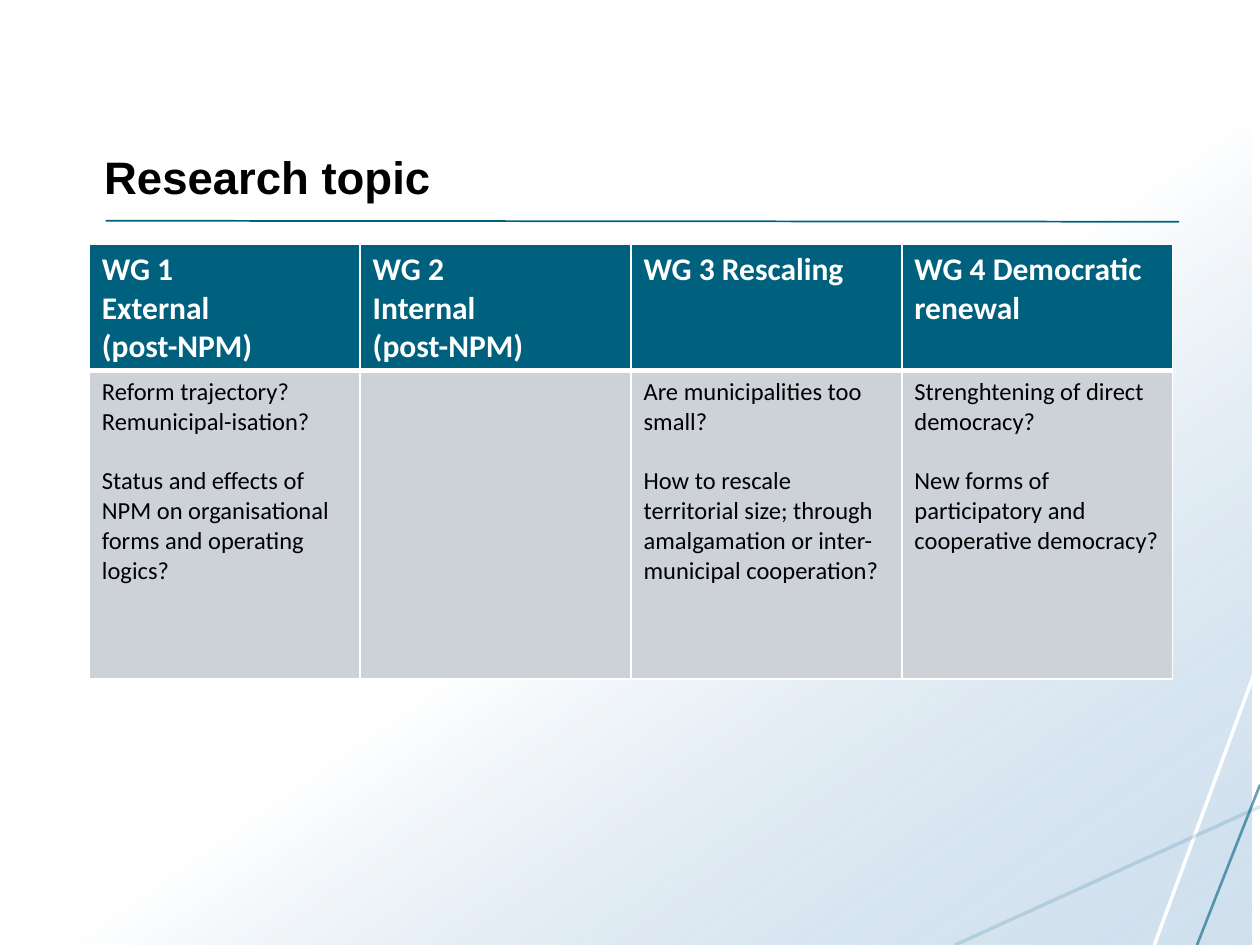
from lxml.etree import SubElement
from pptx import Presentation
from pptx.dml.color import RGBColor
from pptx.enum.shapes import MSO_CONNECTOR, MSO_SHAPE
from pptx.enum.text import MSO_ANCHOR
from pptx.oxml.ns import qn
from pptx.util import Cm, Pt

WHITE = RGBColor(0xFF, 0xFF, 0xFF)
BLACK = RGBColor(0x00, 0x00, 0x00)
PALE_BLUE = RGBColor(0xA9, 0xC7, 0xE0)
TEAL = RGBColor(0x00, 0x61, 0x7F)
LIGHT_TEAL = RGBColor(0x15, 0x71, 0x8F)
GREY = RGBColor(0xCC, 0xD2, 0xD8)


def set_alpha(properties, percent):
    color = next(properties.iter(qn("a:srgbClr")))
    SubElement(color, qn("a:alpha"), val=str(percent * 1000))


def add_border(cell, side, width):
    border = SubElement(cell._tc.get_or_add_tcPr(), qn("a:" + side), w=str(Pt(width)))
    fill = SubElement(border, qn("a:solidFill"))
    SubElement(fill, qn("a:srgbClr"), val=str(WHITE))


presentation = Presentation()
presentation.slide_width = Cm(25.4)
presentation.slide_height = Cm(19.05)
slide = presentation.slides.add_slide(presentation.slide_layouts[6])

# Gradient backdrop
backdrop = slide.shapes.add_shape(MSO_SHAPE.RECTANGLE, Cm(-0.18), Cm(0), Cm(25.4), Cm(19.05))
backdrop.shadow.inherit = False
backdrop.line.fill.background()
backdrop.fill.gradient()
backdrop.fill.gradient_angle = 305
start, end = backdrop.fill.gradient_stops
start.position, start.color.rgb = 0.54, WHITE
end.position, end.color.rgb = 1, PALE_BLUE
set_alpha(backdrop._element.spPr.findall(".//" + qn("a:gs"))[1], 54)

# Corner lines and the rule under the title: ends, colour, width, opacity
lines = [
    (25.4, 13.26, 23.27, 19.05, WHITE, 2, 100),
    (25.4, 16.26, 19.25, 19.05, LIGHT_TEAL, 2, 16),
    (25.4, 15.82, 24.13, 19.05, TEAL, 1.5, 60),
    (2.13, 4.45, 23.77, 4.47, TEAL, 1, 100),
]
for x1, y1, x2, y2, color, width, opacity in lines:
    line = slide.shapes.add_connector(MSO_CONNECTOR.STRAIGHT, Cm(x1), Cm(y1), Cm(x2), Cm(y2))
    line.line.color.rgb = color
    line.line.width = Pt(width)
    if opacity < 100:
        set_alpha(line._element.spPr, opacity)
    SubElement(line._element.spPr, qn("a:effectLst"))

# Title
title = slide.shapes.add_textbox(Cm(1.85), Cm(0.84), Cm(21.9), Cm(3.38))
title.text_frame.word_wrap = True
title.text_frame.vertical_anchor = MSO_ANCHOR.BOTTOM
run = title.text_frame.paragraphs[0].add_run()
run.text = "Research topic"
run.font.name = "Arial"
run.font.size = Pt(26)
run.font.bold = True
run.font.color.rgb = BLACK

# Working group table: one list of paragraphs per cell
headings = [
    ["WG 1", "External", "(post-NPM)"],
    ["WG 2", "Internal", "(post-NPM)"],
    ["WG 3 Rescaling"],
    ["WG 4 Democratic renewal"],
]
questions = [
    ["Reform trajectory?", "Remunicipal-isation?",
     "Status and effects of NPM on organisational forms and operating logics?"],
    [],
    ["Are municipalities too small?",
     "How to rescale territorial size; through amalgamation or inter-municipal cooperation?"],
    ["Strenghtening of direct democracy?",
     "New forms of participatory and cooperative democracy?"],
]
# Paragraphs, fill, text colour, size, bold, bottom border, gap before the last paragraph
row_styles = [
    (headings, TEAL, WHITE, 18, True, 3, 0),
    (questions, GREY, BLACK, 14, False, 1, 17),
]
table = slide.shapes.add_table(2, 4, Cm(1.8), Cm(4.93), Cm(21.84), Cm(8.76)).table
table.rows[0].height = Cm(2.54)
table.rows[1].height = Cm(6.22)
for row, (texts, fill, color, size, bold, bottom, gap) in enumerate(row_styles):
    for column, cell_texts in enumerate(texts):
        cell = table.cell(row, column)
        top = 3 if row else 1
        for side, width in (("lnL", 1), ("lnR", 1), ("lnT", top), ("lnB", bottom)):
            add_border(cell, side, width)
        cell.fill.solid()
        cell.fill.fore_color.rgb = fill
        for index, text in enumerate(cell_texts):
            frame = cell.text_frame
            paragraph = frame.add_paragraph() if index else frame.paragraphs[0]
            if index and index == len(cell_texts) - 1:
                paragraph.space_before = Pt(gap)
            run = paragraph.add_run()
            run.text = text
            run.font.name = "Calibri"
            run.font.size = Pt(size)
            run.font.bold = bold
            run.font.color.rgb = color

presentation.save("out.pptx")
